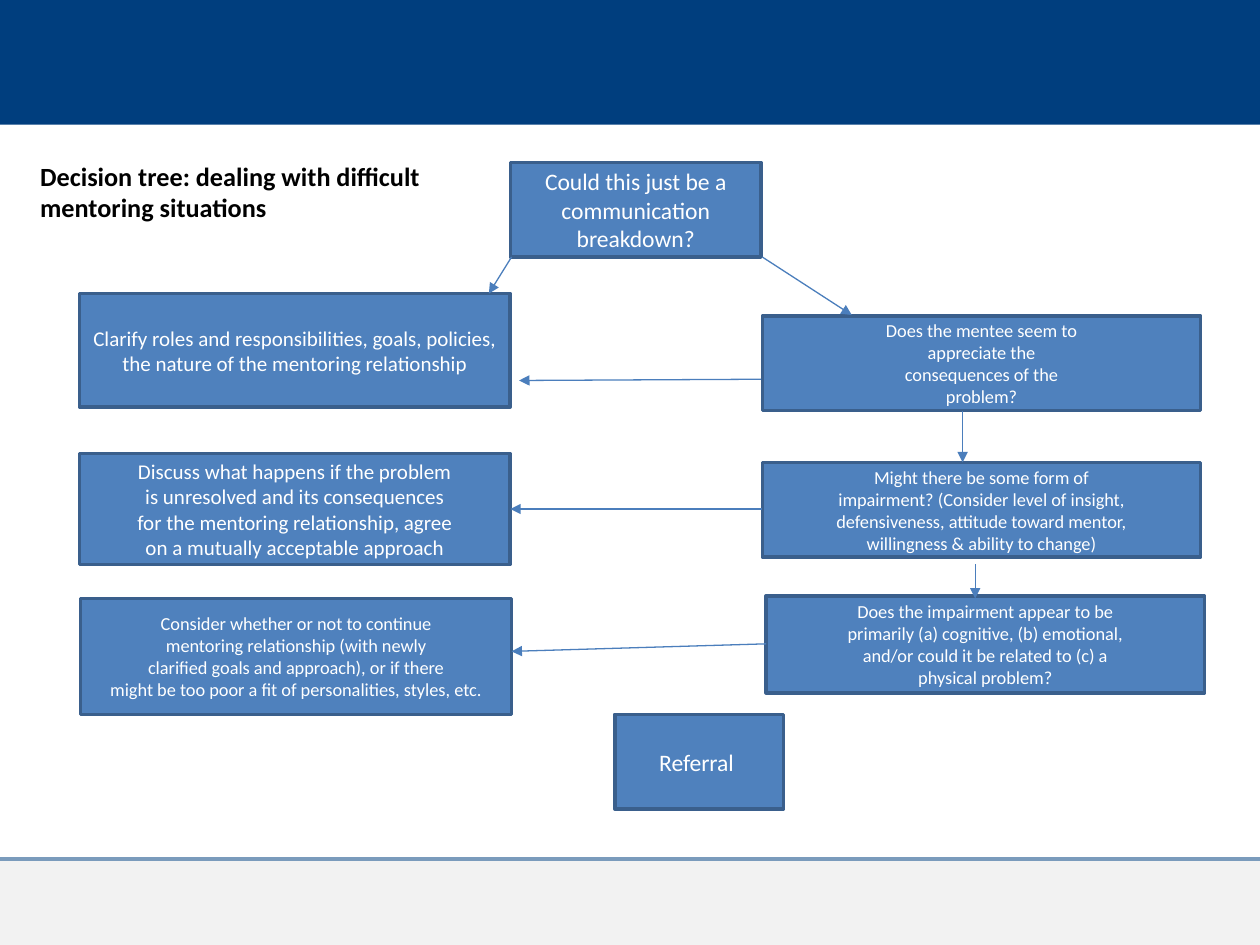
"""Build a decision tree slide on difficult mentoring situations."""
from lxml import etree
from pptx import Presentation
from pptx.dml.color import RGBColor
from pptx.enum.shapes import MSO_CONNECTOR, MSO_SHAPE
from pptx.enum.text import MSO_ANCHOR, PP_ALIGN
from pptx.oxml.ns import qn
from pptx.util import Inches, Pt

RECT = MSO_SHAPE.RECTANGLE
LINE = MSO_CONNECTOR.STRAIGHT
MIDDLE = MSO_ANCHOR.MIDDLE
CENTER = PP_ALIGN.CENTER

NAVY = RGBColor(0x00, 0x3E, 0x7E)
GREY = RGBColor(0xF2, 0xF2, 0xF2)
RULE = RGBColor(0x7A, 0x9B, 0xBC)
BLUE = RGBColor(0x4F, 0x81, 0xBD)
EDGE = RGBColor(0x3A, 0x5F, 0x8C)
ARROW = RGBColor(0x4B, 0x7E, 0xBC)
WHITE = RGBColor(0xFF, 0xFF, 0xFF)
BLACK = RGBColor(0x00, 0x00, 0x00)
FONT = "Calibri"

TITLE = "Decision tree: dealing with difficult mentoring situations"
LEFT_W, RIGHT_W = 3.42, 3.48
STEPS = [
    ((4.05, 1.29, 1.99, 0.75), 13.5,
     ["Could this just be a communication breakdown?"]),
    ((0.63, 2.33, LEFT_W, 0.9), 12,
     ["Clarify roles and responsibilities, goals, policies, "
      "the nature of the mentoring relationship"]),
    ((6.05, 2.51, RIGHT_W, 0.75), 10.5,
     ["Does the mentee seem to", "appreciate the",
      "consequences of the", "problem?"]),
    ((0.63, 3.6, LEFT_W, 0.88), 12,
     ["Discuss what happens if the problem",
      "is unresolved and its consequences",
      "for the mentoring relationship, agree",
      "on a mutually acceptable approach"]),
    ((6.05, 3.67, RIGHT_W, 0.75), 10.5,
     ["Might there be some form of",
      "impairment? (Consider level of insight,",
      "defensiveness, attitude toward mentor,",
      "willingness & ability to change)"]),
    ((0.64, 4.75, LEFT_W, 0.92), 10.5,
     ["Consider whether or not to continue",
      "mentoring relationship (with newly",
      "clarified goals and approach), or if there",
      "might be too poor a fit of personalities, styles, etc."]),
    ((6.08, 4.73, RIGHT_W, 0.77), 10.5,
     ["Does the impairment appear to be",
      "primarily (a) cognitive, (b) emotional,",
      "and/or could it be related to (c) a",
      "physical problem?"]),
    ((4.88, 5.67, 1.34, 0.75), 13.5, ["Referral "]),
]
ARROWS = [
    (6.05, 2.04, 6.76, 2.5),
    (4.06, 2.04, 3.88, 2.33),
    (7.64, 3.26, 7.64, 3.67),
    (7.74, 4.48, 7.74, 4.75),
    (6.04, 3.01, 4.12, 3.02),
    (6.05, 4.04, 4.05, 4.04),
    (6.08, 5.11, 4.06, 5.17),
]


def add_rect(slide, place, fill):
    rect = slide.shapes.add_shape(RECT, *map(Inches, place))
    rect.shadow.inherit = False
    rect.fill.solid()
    rect.fill.fore_color.rgb = fill
    rect.line.fill.background()
    return rect


def add_line(slide, ends, color, width):
    line = slide.shapes.add_connector(LINE, *map(Inches, ends))
    line.line.color.rgb = color
    line.line.width = Pt(width)
    etree.SubElement(line._element.spPr, qn("a:effectLst"))
    return line


def set_text(frame, text, size, color, bold=False, align=None):
    frame.word_wrap = True
    frame.text = text
    for para in frame.paragraphs:
        para.alignment = align
        for run in para.runs:
            font = run.font
            font.name, font.size, font.bold = FONT, Pt(size), bold
            font.color.rgb = color


def add_step(slide, place, size, lines):
    box = add_rect(slide, place, BLUE)
    box.line.color.rgb = EDGE
    box.line.width = Pt(2)
    box.text_frame.vertical_anchor = MIDDLE
    set_text(box.text_frame, "\n".join(lines), size, WHITE, align=CENTER)


def add_arrow(slide, ends):
    line = add_line(slide, ends, ARROW, 0.75)
    etree.SubElement(line.line._get_or_add_ln(), qn("a:tailEnd"), type="triangle")


def main():
    deck = Presentation()
    deck.slide_width, deck.slide_height = Inches(10), Inches(7.5)
    slide = deck.slides.add_slide(deck.slide_layouts[6])
    add_rect(slide, (0, 0, 10, 0.99), NAVY)
    add_rect(slide, (0, 6.82, 10, 0.68), GREY)
    add_line(slide, (0, 6.82, 10, 6.82), RULE, 2.25)
    for step in STEPS:
        add_step(slide, *step)
    for ends in ARROWS:
        add_arrow(slide, ends)
    title = slide.shapes.add_textbox(*map(Inches, (0.22, 1.22, 3.68, 0.61)))
    set_text(title.text_frame, TITLE, 15, BLACK, bold=True)
    deck.save("out.pptx")


if __name__ == "__main__":
    main()
